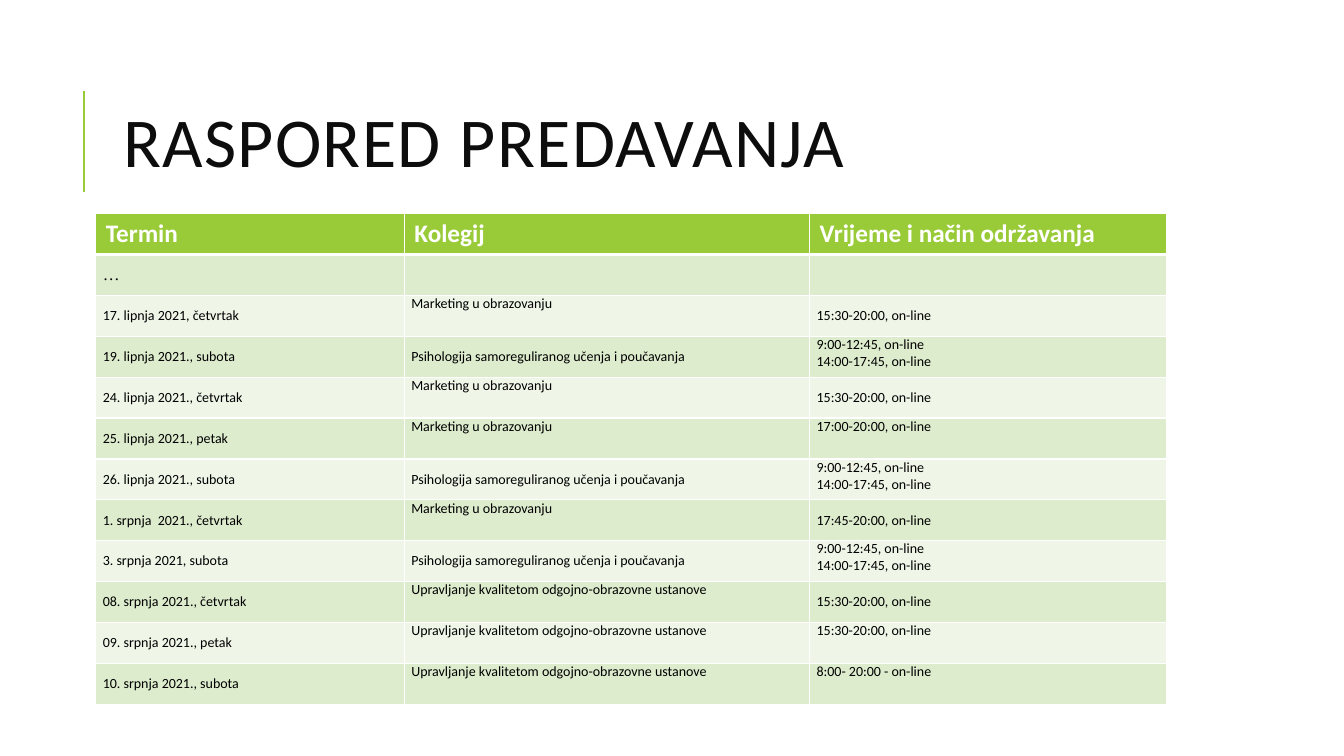
from lxml import etree
from pptx import Presentation
from pptx import util as u
from pptx.dml.color import RGBColor
from pptx.enum import shapes, text
from pptx.oxml.ns import qn

GREEN, WHITE, BLACK = "99CB38", "FFFFFF", "000000"
BANDS = ("DEECCE", "EFF6E8")
HEADINGS = ("Termin", "Kolegij", "Vrijeme i način održavanja")
COLUMN_WIDTHS = (3.06, 4.02, 3.54)
TABLE_LEFT, TABLE_TOP, TABLE_HEIGHT = 0.95, 2.12, 4.87
MARKETING = "Marketing u obrazovanju"
PSYCHOLOGY = "Psihologija samoreguliranog učenja i poučavanja"
QUALITY = "Upravljanje kvalitetom odgojno-obrazovne ustanove"
AFTERNOON = "15:30-20:00, on-line"
ALL_DAY = "9:00-12:45, on-line\n14:00-17:45, on-line"
LECTURES = (
    ("17. lipnja 2021, četvrtak", MARKETING, AFTERNOON),
    ("19. lipnja 2021., subota", PSYCHOLOGY, ALL_DAY),
    ("24. lipnja 2021., četvrtak", MARKETING, AFTERNOON),
    ("25. lipnja 2021., petak", MARKETING, "17:00-20:00, on-line"),
    ("26. lipnja 2021., subota", PSYCHOLOGY, ALL_DAY),
    ("1. srpnja  2021., četvrtak", MARKETING, "17:45-20:00, on-line"),
    ("3. srpnja 2021, subota", PSYCHOLOGY, ALL_DAY),
    ("08. srpnja 2021., četvrtak", QUALITY, AFTERNOON),
    ("09. srpnja 2021., petak", QUALITY, AFTERNOON),
    ("10. srpnja 2021., subota", QUALITY, "8:00- 20:00 - on-line"),
)


def paint(color_format, color):
    color_format.rgb = RGBColor.from_string(color)


def add_run(paragraph, content, size, color, bold=False, font="Calibri"):
    run = paragraph.add_run()
    run.text = content
    run.font.name = font
    run.font.size = u.Pt(size)
    run.font.bold = bold
    run.font.fill.solid()
    paint(run.font.fill.fore_color, color)
    return run


def add_title(slide, content):
    title = slide.shapes.title
    title.left, title.top = u.Inches(1.12), u.Inches(0.64)
    title.width, title.height = u.Inches(10.63), u.Inches(1.64)
    frame = title.text_frame
    frame.word_wrap = True
    frame.auto_size = text.MSO_AUTO_SIZE.NONE
    frame.vertical_anchor = text.MSO_ANCHOR.MIDDLE
    paragraph = frame.paragraphs[0]
    paragraph.alignment = text.PP_ALIGN.LEFT
    paragraph.line_spacing = 0.8
    run = add_run(paragraph, content, 50, "0D0D0D")
    run.font._element.set("spc", "100")


def add_accent_line(slide):
    x = u.Inches(0.83)
    line = slide.shapes.add_connector(
        shapes.MSO_CONNECTOR.STRAIGHT, x, u.Inches(1.9), x, u.Inches(0.9))
    paint(line.line.color, GREEN)
    line.line.width = u.Pt(1.5)
    etree.SubElement(line._element.spPr, qn("a:effectLst"))


def set_borders(cell, top, bottom):
    properties = cell._tc.get_or_add_tcPr()
    widths = {"lnL": 1, "lnR": 1, "lnT": top, "lnB": bottom}
    for index, (side, width) in enumerate(widths.items()):
        border = etree.Element(qn("a:" + side), w=str(u.Pt(width)))
        fill = etree.SubElement(border, qn("a:solidFill"))
        etree.SubElement(fill, qn("a:srgbClr"), val=WHITE)
        properties.insert(index, border)


def fill_cell(cell, fill, content, size=10, color=BLACK, bold=False, font="Calibri"):
    cell.fill.solid()
    paint(cell.fill.fore_color, fill)
    for index, line in enumerate(content.split("\n")):
        frame = cell.text_frame
        paragraph = frame.add_paragraph() if index else frame.paragraphs[0]
        if line:
            add_run(paragraph, line, size, color, bold, font)
        else:
            paragraph.font.size = u.Pt(size)


def fill_body_cell(cell, row, content, centred, **style):
    cell.margin_left = cell.margin_right = u.Inches(0.07)
    cell.margin_top = cell.margin_bottom = 0
    cell.vertical_anchor = text.MSO_ANCHOR.MIDDLE if centred else text.MSO_ANCHOR.TOP
    fill_cell(cell, BANDS[(row - 1) % 2], content, **style)
    set_borders(cell, 3 if row == 1 else 1, 1)


def add_schedule(slide):
    row_count = len(LECTURES) + 2
    table = slide.shapes.add_table(
        row_count, len(HEADINGS), u.Inches(TABLE_LEFT), u.Inches(TABLE_TOP),
        u.Inches(sum(COLUMN_WIDTHS)), u.Inches(TABLE_HEIGHT)).table
    for column, width in zip(table.columns, COLUMN_WIDTHS):
        column.width = u.Inches(width)
    for row in table.rows:
        row.height = u.Inches(TABLE_HEIGHT / row_count)
    for column, heading in enumerate(HEADINGS):
        cell = table.cell(0, column)
        fill_cell(cell, GREEN, heading, 18, WHITE, True)
        set_borders(cell, 1, 3)
    for column, content in enumerate(("…", "", "")):
        fill_body_cell(table.cell(1, column), 1, content, True,
                       size=12, font="Times New Roman")
    for row, lecture in enumerate(LECTURES, 2):
        date, subject, _ = lecture
        centred = (True, subject == PSYCHOLOGY, date.endswith("četvrtak"))
        for column, content in enumerate(lecture):
            fill_body_cell(table.cell(row, column), row, content, centred[column])


def main():
    presentation = Presentation()
    presentation.slide_width = u.Inches(13.33)
    presentation.slide_height = u.Inches(7.5)
    slide = presentation.slides.add_slide(presentation.slide_layouts.get_by_name("Title Only"))
    add_accent_line(slide)
    add_title(slide, "RASPORED PREDAVANJA")
    add_schedule(slide)
    presentation.save("out.pptx")


if __name__ == "__main__":
    main()
